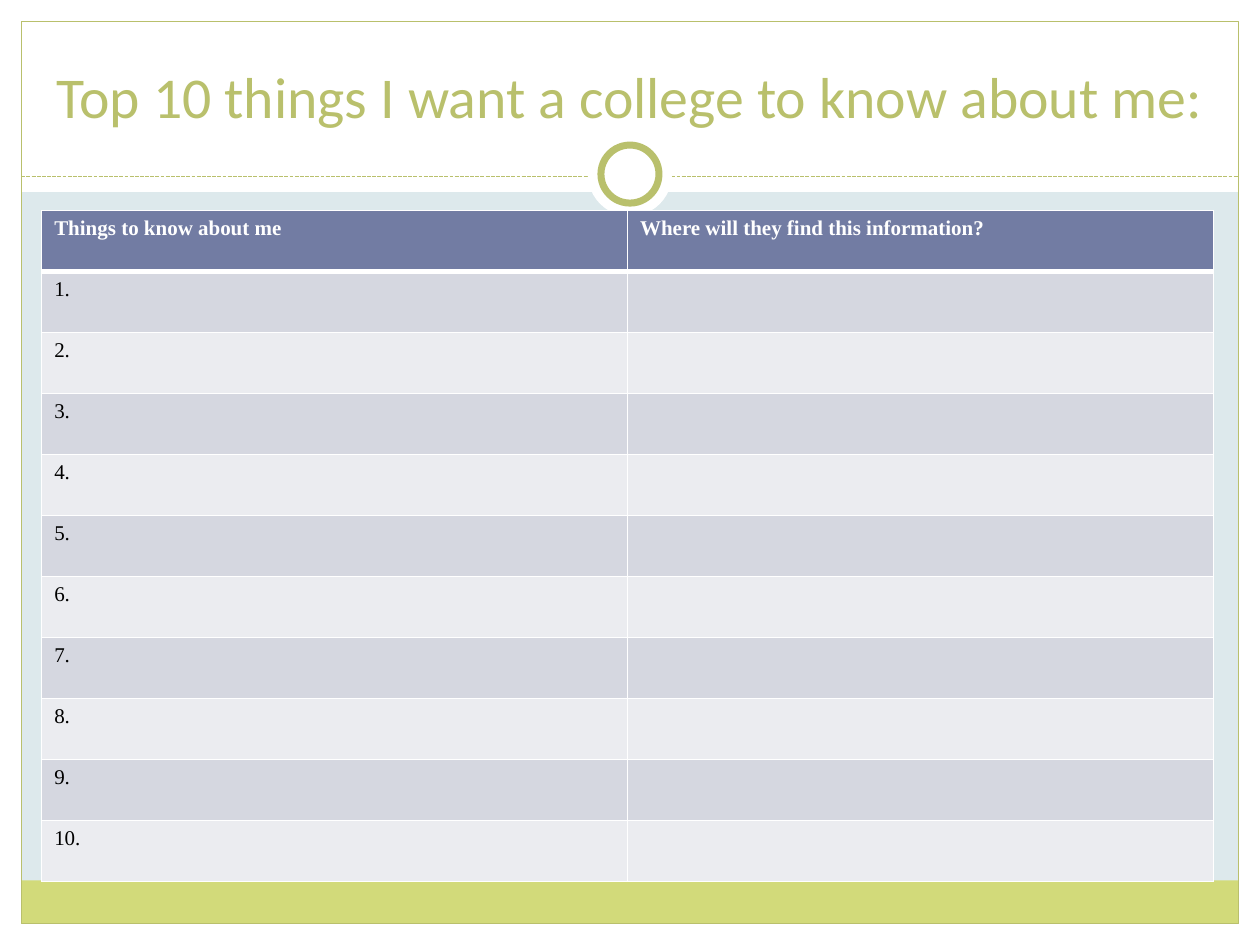
import pptx
import pptx.util
import pptx.dml.color
import pptx.enum.dml
import pptx.enum.shapes
import pptx.enum.text
import pptx.oxml.ns
import lxml.etree

Cm = pptx.util.Cm
Pt = pptx.util.Pt
SHAPE = pptx.enum.shapes.MSO_SHAPE

WHITE, BLACK = "FFFFFF", "000000"
OLIVE, LIME, PALE_BLUE = "B9C06C", "D2DA7A", "DDE9EC"
HEADER_FILL, BAND_FILLS = "727CA3", ("D5D7E0", "EBECF0")

SLIDE_W, SLIDE_H = 25.4, 19.05
MARGIN = 0.43
INNER_W, INNER_H = SLIDE_W - 2 * MARGIN, SLIDE_H - 2 * MARGIN
DIVIDER_Y = 3.56
HEADINGS = ("Things to know about me", "Where will they find this information?")
ITEM_COUNT = 10


def color(hex_value):
    return pptx.dml.color.RGBColor.from_string(hex_value)


def add_panel(slide, kind, left, top, width, height, fill=None, line=None, weight=0.75):
    panel = slide.shapes.add_shape(kind, Cm(left), Cm(top), Cm(width), Cm(height))
    panel.shadow.inherit = False
    if fill:
        panel.fill.solid()
        panel.fill.fore_color.rgb = color(fill)
    else:
        panel.fill.background()
    if line:
        panel.line.color.rgb = color(line)
        panel.line.width = Pt(weight)
    else:
        panel.line.fill.background()


def add_circle(slide, center_y, diameter, **style):
    add_panel(slide, SHAPE.OVAL, (SLIDE_W - diameter) / 2, center_y - diameter / 2,
              diameter, diameter, **style)


def add_divider(slide):
    divider = slide.shapes.add_connector(
        pptx.enum.shapes.MSO_CONNECTOR.STRAIGHT,
        Cm(MARGIN), Cm(DIVIDER_Y), Cm(SLIDE_W - MARGIN), Cm(DIVIDER_Y))
    divider.line.color.rgb = color(OLIVE)
    divider.line.width = Pt(0.75)
    divider.line.dash_style = pptx.enum.dml.MSO_LINE.SQUARE_DOT
    lxml.etree.SubElement(divider._element.spPr, pptx.oxml.ns.qn("a:effectLst"))


def add_text(paragraph, text, font, size, hex_value, bold=False):
    run = paragraph.add_run()
    run.text = text
    run.font.name = font
    run.font.size = Pt(size)
    run.font.bold = bold
    run.font.color.rgb = color(hex_value)


def set_title(slide, text):
    title = slide.shapes.title
    # Bring the title in front of the frame panels
    slide.shapes.element.append(title.element)
    title.left, title.top, title.width, title.height = Cm(0.84), Cm(0.64), Cm(23.7), Cm(2.1)
    frame = title.text_frame
    frame.auto_size = pptx.enum.text.MSO_AUTO_SIZE.NONE
    frame.word_wrap = True
    frame.margin_left = frame.margin_right = Cm(0.13)
    frame.vertical_anchor = pptx.enum.text.MSO_ANCHOR.BOTTOM
    heading = frame.paragraphs[0]
    heading.alignment = pptx.enum.text.PP_ALIGN.CENTER
    add_text(heading, text, "Calibri", 33, OLIVE)


def set_borders(cell, top=1, bottom=1):
    # Borders come before the fill in the cell properties
    properties = cell._tc.get_or_add_tcPr()
    sides = (("L", 1), ("R", 1), ("T", top), ("B", bottom))
    for position, (side, weight) in enumerate(sides):
        border = lxml.etree.Element(pptx.oxml.ns.qn(f"a:ln{side}"), w=str(Pt(weight)))
        fill = lxml.etree.SubElement(border, pptx.oxml.ns.qn("a:solidFill"))
        lxml.etree.SubElement(fill, pptx.oxml.ns.qn("a:srgbClr"), val=WHITE)
        properties.insert(position, border)


def add_worksheet(slide):
    row_count = ITEM_COUNT + 1
    worksheet = slide.shapes.add_table(
        row_count, len(HEADINGS), Cm(0.84), Cm(4.24), Cm(23.62), Cm(1.23 * row_count)).table
    rows = [HEADINGS] + [(f"{number}.", "") for number in range(1, row_count)]
    for row, texts in enumerate(rows):
        is_header = row == 0
        for column, text in enumerate(texts):
            cell = worksheet.cell(row, column)
            cell.fill.solid()
            cell.fill.fore_color.rgb = color(HEADER_FILL if is_header else BAND_FILLS[(row - 1) % 2])
            set_borders(cell, top=3 if row == 1 else 1, bottom=3 if is_header else 1)
            if text:
                add_text(cell.text_frame.paragraphs[0], text, "Times New Roman", 12,
                         WHITE if is_header else BLACK, is_header)


def main():
    deck = pptx.Presentation()
    deck.slide_width, deck.slide_height = Cm(SLIDE_W), Cm(SLIDE_H)
    slide = deck.slides.add_slide(deck.slide_layouts[5])
    slide.background.fill.solid()
    slide.background.fill.fore_color.rgb = color(PALE_BLUE)

    # White margins, header band and footer band
    for area in ((0, SLIDE_H - MARGIN, SLIDE_W, MARGIN),
                 (0, 0, SLIDE_W, 3.87),
                 (0, 0, MARGIN, SLIDE_H),
                 (SLIDE_W - MARGIN, 0, MARGIN, SLIDE_H)):
        add_panel(slide, SHAPE.RECTANGLE, *area, fill=WHITE)
    add_panel(slide, SHAPE.RECTANGLE, MARGIN, 17.75, INNER_W, 0.87, fill=LIME)

    # Frame, dashed divider and ring
    add_panel(slide, SHAPE.RECTANGLE, MARGIN, MARGIN, INNER_W, INNER_H, line=OLIVE)
    add_divider(slide)
    add_circle(slide, 3.51, 1.7, fill=WHITE)
    add_circle(slide, 3.51, 1.17, fill=WHITE, line=OLIVE, weight=4)

    # Title and table
    set_title(slide, "Top 10 things I want a college to know about me:")
    add_worksheet(slide)
    deck.save("out.pptx")


if __name__ == "__main__":
    main()
